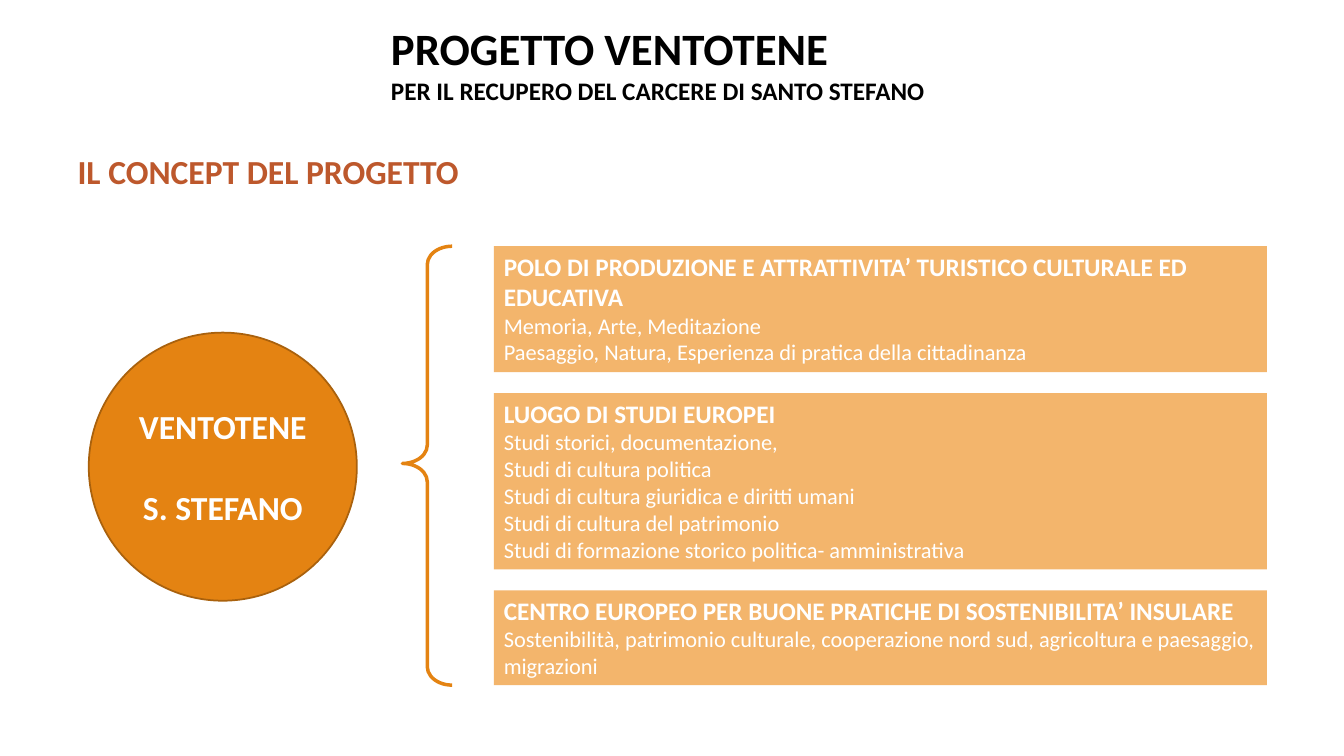
import pptx
import pptx.util
import pptx.dml.color
import pptx.enum.shapes
import pptx.enum.text

Pt = pptx.util.Pt
RGB = pptx.dml.color.RGBColor.from_string
MSO_SHAPE = pptx.enum.shapes.MSO_SHAPE
ANCHOR = pptx.enum.text.MSO_ANCHOR
ALIGN = pptx.enum.text.PP_ALIGN

COLORS = {
    "black": "000000",
    "white": "FFFFFF",
    "rust": "BD582C",
    "orange": "E48312",
    "dark_orange": "A9610D",
    "light_orange": "F3B56C",
}


def write(sp, lines, sizes, color, bold=True, align=ALIGN.LEFT, anchor=ANCHOR.TOP, gap=0):
    """Fill a shape with lines; the last size serves all remaining lines.

    bold=None makes only the first line bold; gap is the space between lines.
    """
    tf = sp.text_frame
    tf.word_wrap = True
    tf.auto_size = pptx.enum.text.MSO_AUTO_SIZE.NONE
    tf.vertical_anchor = anchor
    for i, line in enumerate(lines):
        p = tf.add_paragraph() if i else tf.paragraphs[0]
        p.alignment = align
        if i and gap:
            p.space_before = Pt(gap)
        r = p.add_run()
        r.text = line
        r.font.name = "Calibri"
        r.font.size = Pt(sizes[min(i, len(sizes) - 1)])
        r.font.bold = i == 0 if bold is None else bold
        r.font.color.rgb = RGB(COLORS[color])


prs = pptx.Presentation()
prs.slide_width, prs.slide_height = Pt(960), Pt(540)
s = prs.slides.add_slide(prs.slide_layouts[5])

# Headings
header = s.shapes.add_textbox(Pt(272.2), Pt(11.5), Pt(405.4), Pt(67.7))
write(header, ["PROGETTO VENTOTENE", "PER IL RECUPERO DEL CARCERE DI SANTO STEFANO"],
      [32, 18], "black")

title = s.shapes.title
title.left, title.top, title.width, title.height = Pt(48.2), Pt(104.4), Pt(405.4), Pt(36)
write(title, ["IL CONCEPT DEL PROGETTO"], [24], "rust")

# Place
circle = s.shapes.add_shape(MSO_SHAPE.OVAL, Pt(63.4), Pt(237.6), Pt(191.5), Pt(191.5))
circle.shadow.inherit = False
circle.fill.solid()
circle.fill.fore_color.rgb = RGB(COLORS["orange"])
circle.line.color.rgb = RGB(COLORS["dark_orange"])
circle.line.width = Pt(1.25)
write(circle, ["VENTOTENE", "S. STEFANO"], [24], "white",
      align=ALIGN.CENTER, anchor=ANCHOR.MIDDLE, gap=29)

# Three goals, stacked with equal gaps
goals = [
    (90, ["POLO DI PRODUZIONE E ATTRATTIVITA’ TURISTICO CULTURALE ED EDUCATIVA",
          "Memoria, Arte, Meditazione",
          "Paesaggio, Natura, Esperienza di pratica della cittadinanza"]),
    (126, ["LUOGO DI STUDI EUROPEI",
           "Studi storici, documentazione,",
           "Studi di cultura politica",
           "Studi di cultura giuridica e diritti umani",
           "Studi di cultura del patrimonio",
           "Studi di formazione storico politica- amministrativa"]),
    (67.7, ["CENTRO EUROPEO PER BUONE PRATICHE DI SOSTENIBILITA’ INSULARE",
            "Sostenibilità, patrimonio culturale, cooperazione nord sud, "
            "agricoltura e paesaggio, migrazioni"]),
]
GOALS_TOP, GOALS_GAP = 175.9, 14.9
top = GOALS_TOP
for height, lines in goals:
    box = s.shapes.add_shape(MSO_SHAPE.RECTANGLE, Pt(352.8), Pt(top), Pt(552.2), Pt(height))
    box.shadow.inherit = False
    box.fill.solid()
    box.fill.fore_color.rgb = RGB(COLORS["light_orange"])
    box.line.fill.background()
    write(box, lines, [18, 16], "white", bold=None)
    top += height + GOALS_GAP

# Brace spanning the goals
brace = s.shapes.add_shape(MSO_SHAPE.LEFT_BRACE, Pt(287.5), Pt(GOALS_TOP),
                           Pt(35.5), Pt(top - GOALS_GAP - GOALS_TOP))
brace.adjustments[0] = 0.37
brace.adjustments[1] = 0.495
brace.shadow.inherit = False
brace.fill.background()
brace.line.color.rgb = RGB(COLORS["orange"])
brace.line.width = Pt(2.5)

prs.save("out.pptx")
